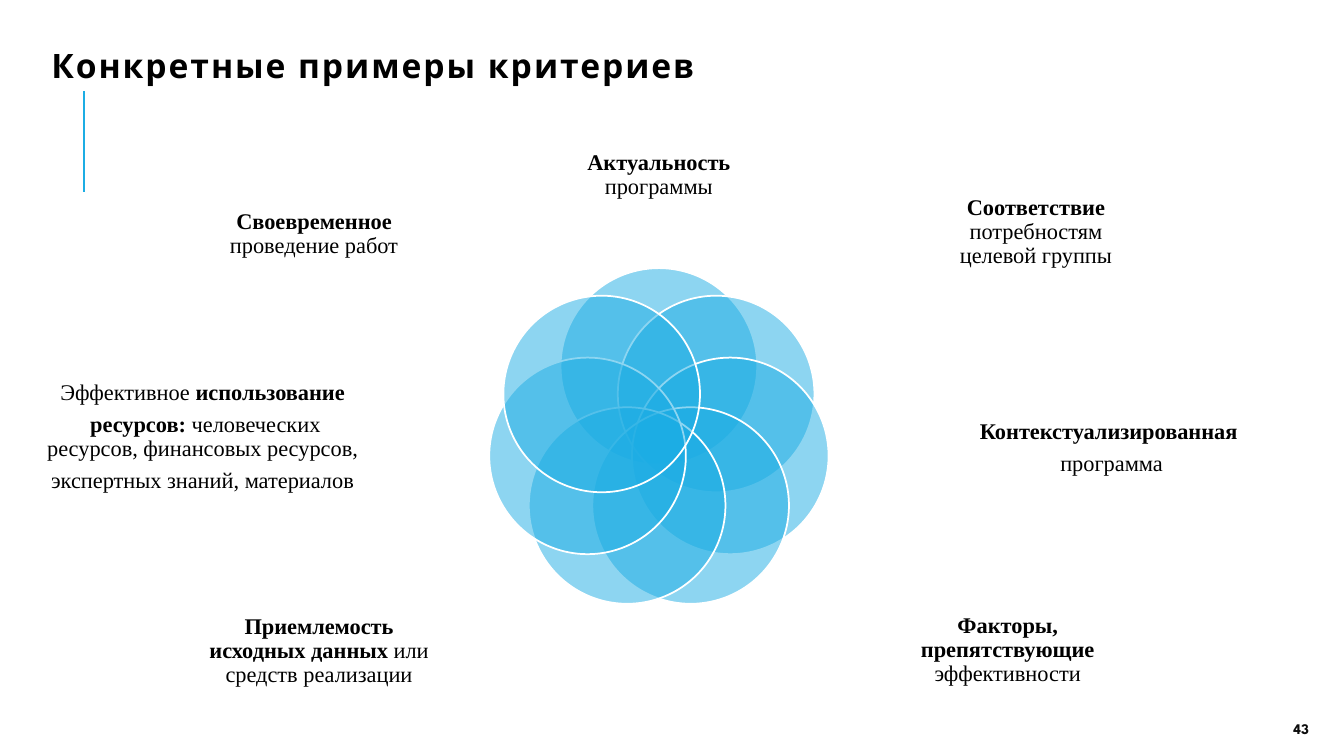
import math

import lxml.etree
import pptx
import pptx.dml.color
import pptx.enum.shapes
import pptx.enum.text
import pptx.oxml.ns
import pptx.util

PX = 9144  # 100 px to the inch
BLACK = pptx.dml.color.RGBColor(0, 0, 0)
DARK = pptx.dml.color.RGBColor(0x0D, 0x0D, 0x0D)
BLUE = pptx.dml.color.RGBColor(0x1C, 0xAD, 0xE4)
WHITE = pptx.dml.color.RGBColor(255, 255, 255)
HEAD_FONT = "League Spartan"
BODY_FONT = "Times New Roman"
MIDDLE = pptx.enum.text.MSO_ANCHOR.MIDDLE
TOP = pptx.enum.text.MSO_ANCHOR.TOP
LEFT = pptx.enum.text.PP_ALIGN.LEFT
CENTER = pptx.enum.text.PP_ALIGN.CENTER

# Each label: box, then paragraphs made of (text, bold) runs
LABELS = [
    ((542, 114, 223, 119), [[("Актуальность", True), (" программы", False)]]),
    ((922, 165, 211, 131), [[("Соответствие", True),
                             (" потребностям целевой группы", False)]]),
    ((912, 375, 381, 140), [[("Контекстуализированная ", True)],
                            [("программа", False)]]),
    ((888, 581, 223, 128), [[("Факторы, препятствующие ", True),
                             ("эффективности", False)]]),
    ((205, 582, 223, 128), [[("Приемлемость исходных данных ", True),
                             ("или средств реализации", False)]]),
    ((46, 364, 310, 140), [[("Эффективное ", False), ("использование", True)],
                           [(" ресурсов:", True),
                            (" человеческих ресурсов, финансовых ресурсов, ", False)],
                           [("экспертных знаний, материалов", False)]]),
    ((206, 167, 211, 131), [[("Своевременное", True), (" проведение работ", False)]]),
]


def emu(box):
    return [round(v * PX) for v in box]


def write(sp, paragraphs, font=BODY_FONT, size=16, color=BLACK, align=CENTER,
          anchor=MIDDLE, inset=(0, 0), line=1.0, after=0, spacing=0):
    tf = sp.text_frame
    tf.word_wrap = True
    tf.auto_size = pptx.enum.text.MSO_AUTO_SIZE.NONE
    tf.vertical_anchor = anchor
    tf.margin_left = tf.margin_right = inset[0] * PX
    tf.margin_top = tf.margin_bottom = inset[1] * PX
    for i, runs in enumerate(paragraphs):
        p = tf.add_paragraph() if i else tf.paragraphs[0]
        p.alignment = align
        p.line_spacing = line
        p.space_before = pptx.util.Pt(0)
        p.space_after = pptx.util.Pt(after)
        for text, bold in runs:
            r = p.add_run()
            r.text = text
            r.font.name = font
            r.font.size = pptx.util.Pt(size)
            r.font.bold = bold
            r.font.color.rgb = color
            if spacing:
                r.font._element.set("spc", str(spacing))


def add_header(s, box):
    x, y, w, h = box
    # Title
    sp = s.shapes.title
    sp.left, sp.top, sp.width, sp.height = emu(box)
    write(sp, [[("Конкретные примеры критериев", True)]], font=HEAD_FONT, size=24,
          align=LEFT, anchor=TOP, inset=(5, 5), spacing=140)
    # Accent line below the title
    rule = s.shapes.add_connector(pptx.enum.shapes.MSO_CONNECTOR.STRAIGHT,
                                  *emu((x + 37, y + 150, x + 37, y + 50)))
    rule.line.color.rgb = BLUE
    rule.line.width = pptx.util.Pt(1.5)
    lxml.etree.SubElement(rule._element.spPr, pptx.oxml.ns.qn("a:effectLst"))


def add_petals(s, box, count, diameter):
    x, y, w, h = box
    ring = (h - diameter) / (1 + math.cos(math.pi / count))
    for i in range(count):
        angle = 2 * math.pi * i / count
        left = x + (w - diameter) / 2 + ring * math.sin(angle)
        top = y + ring * (1 - math.cos(angle))
        sp = s.shapes.add_shape(pptx.enum.shapes.MSO_SHAPE.OVAL,
                                *emu((left, top, diameter, diameter)))
        sp.shadow.inherit = False
        sp.fill.solid()
        sp.fill.fore_color.rgb = BLUE
        sp.line.color.rgb = WHITE
        sp.line.width = pptx.util.Pt(1.25)
        # Half-transparent fill
        fill = sp._element.spPr.find(".//" + pptx.oxml.ns.qn("a:srgbClr"))
        lxml.etree.SubElement(fill, pptx.oxml.ns.qn("a:alpha"), val="50000")


def add_label(s, box, paragraphs):
    sp = s.shapes.add_textbox(*emu(box))
    write(sp, paragraphs, line=0.9, after=5.6)


def add_page_number(s, box):
    sp = s.shapes.add_textbox(*emu(box))
    write(sp, [[("43", True)]], font=HEAD_FONT, size=10.5, color=DARK,
          align=LEFT, inset=(10, 5))


def main():
    prs = pptx.Presentation()
    prs.slide_width, prs.slide_height = emu((1333, 750))
    s = prs.slides.add_slide(prs.slide_layouts[5])
    add_header(s, (46, 40, 1250, 49))
    add_petals(s, (485, 266, 337, 333), count=len(LABELS), diameter=195)
    for box, paragraphs in LABELS:
        add_label(s, box, paragraphs)
    add_page_number(s, (1273, 709, 45, 27))
    prs.save("out.pptx")


if __name__ == "__main__":
    main()
